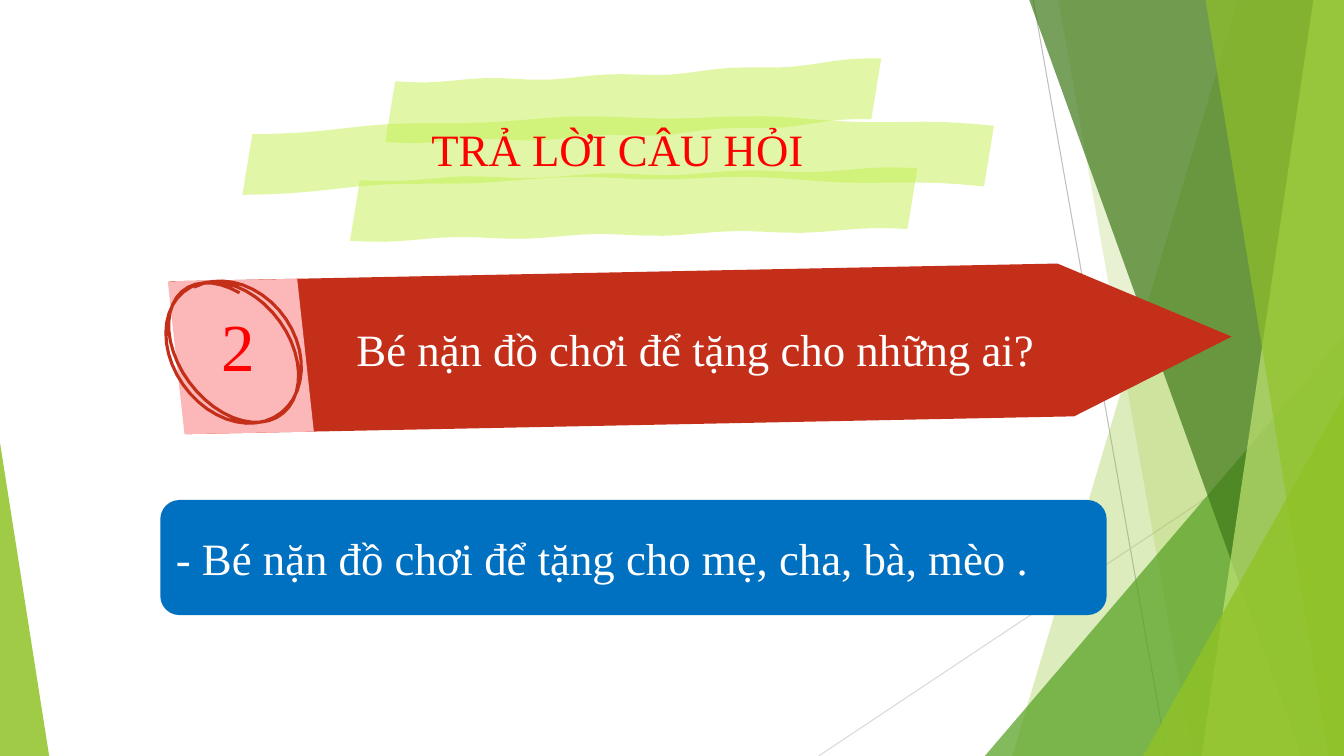
import dataclasses
import math

import pptx
import pptx.dml.color
import pptx.enum.shapes
import pptx.enum.text
import pptx.oxml.ns
import pptx.util
from lxml import etree

Cm = pptx.util.Cm
qn = pptx.oxml.ns.qn
SHAPE = pptx.enum.shapes.MSO_SHAPE
ALIGN = pptx.enum.text.PP_ALIGN
ANCHOR = pptx.enum.text.MSO_ANCHOR


@dataclasses.dataclass(frozen=True)
class Theme:
    font: str = "Times New Roman"
    body_pt: int = 32
    number_pt: int = 48
    white: str = "FFFFFF"
    red: str = "FF0000"
    brick: str = "C42F1A"
    pink: str = "FCB8B8"
    blue: str = "0070C0"
    brush: str = "C4F150"
    lime: str = "90C226"
    pale_lime: str = "C0E474"
    green: str = "54A021"
    dark_green: str = "3F7819"
    grey: str = "BFBFBF"
    light_grey: str = "D9D9D9"


THEME = Theme()


def rgb(colour):
    return pptx.dml.color.RGBColor.from_string(colour)


def mix(a, b, t):
    """Value a share t of the way from a to b."""
    return a + (b - a) * t


def paint(sp, colour, opacity=100):
    sp.shadow.inherit = False
    sp.line.fill.background()
    sp.fill.solid()
    sp.fill.fore_color.rgb = rgb(colour)
    if opacity < 100:
        clr = sp._element.spPr.find(qn("a:solidFill")).find(qn("a:srgbClr"))
        etree.SubElement(clr, qn("a:alpha"), val=str(opacity * 1000))


def add_outline(s, box, points, close=True):
    """Join points, in cm from the box's top left corner, into a freeform."""
    spots = [(Cm(box[0] + x), Cm(box[1] + y)) for x, y in points]
    builder = s.shapes.build_freeform(*spots[0])
    builder.add_line_segments(spots[1:], close=close)
    return builder.convert_to_shape()


def add_triangle(s, box, apex, colour, opacity):
    sp = s.shapes.add_shape(SHAPE.ISOSCELES_TRIANGLE, *map(Cm, box))
    sp.adjustments[0] = apex
    paint(sp, colour, opacity)


def write(sp, text, size, colour, align=ALIGN.CENTER, anchor=ANCHOR.TOP, inset=None):
    tf = sp.text_frame
    tf.word_wrap = True
    tf.vertical_anchor = anchor
    if inset is not None:
        tf.margin_left = tf.margin_top = tf.margin_right = tf.margin_bottom = Cm(inset)
    p = tf.paragraphs[0]
    p.alignment = align
    r = p.add_run()
    r.text = text
    r.font.name = THEME.font
    r.font.size = pptx.util.Pt(size)
    r.font.color.rgb = rgb(colour)


def brush_stroke(left, right, left_y, right_y, arch):
    """Slanted marker stroke: a wavy top edge, and the same edge moved down."""
    thickness, slant, wave, waves, steps = 1.53, 0.25, 0.04, 4, 32
    top_edge = []
    for i in range(steps + 1):
        t = i / steps
        y = mix(left_y, right_y, t) - arch * math.sin(math.pi * t)
        y += wave * math.sin(2 * math.pi * waves * t)
        top_edge.append((mix(left, right, t), y))
    bottom_edge = [(x - slant, y + thickness) for x, y in reversed(top_edge)]
    return top_edge + bottom_edge


def scribbled_ring():
    """Two turns of a pen around an ellipse that widens and tilts as it goes."""
    centre_x, centre_y = 1.68, 2.25
    start, end, steps = 84, 844, 90
    points = []
    for i in range(steps + 1):
        t = i / steps
        angle = mix(start, end, t)
        tilt = mix(-25, -10, t)
        points.append((
            centre_x + mix(1.6, 1.75, t) * math.cos(math.radians(angle)),
            centre_y - mix(1.75, 1.8, t) * math.sin(math.radians(angle + tilt))))
    return points


def on_banner(along, down):
    """Place a point on the tilted banner: cm along it, share of its height down."""
    height, lean, rise = 3.85, 0.42, 0.02
    return 0.08 + along + lean * down, 0.46 - rise * along + height * down


def draw_facets(s, box):
    left, top, w, h = box
    for x1, y1, x2, y2, colour in [(1.22, 0, 4.59, h, THEME.grey),
                                   (w, 10.24, -4.19, h, THEME.light_grey)]:
        line = s.shapes.add_connector(
            pptx.enum.shapes.MSO_CONNECTOR.STRAIGHT,
            Cm(left + x1), Cm(top + y1), Cm(left + x2), Cm(top + y2))
        line.line.color.rgb = rgb(colour)
        line.line.width = pptx.util.Pt(0.75)
        etree.SubElement(line._element.spPr, qn("a:effectLst"))

    def band(top_x, bottom_x, colour, opacity):
        """Fill from a slanting edge to the right side of the box."""
        points = [(top_x, 0), (w, 0), (w, h), (bottom_x, h)]
        paint(add_outline(s, box, points), colour, opacity)

    def corner(x, y, colour, opacity):
        """Fill the bottom right corner of the box with a triangle."""
        add_triangle(s, (left + x, top + y, w - x, h - y), 1, colour, opacity)

    band(6.38, 0.69, THEME.lime, 30)
    band(1.85, 5.23, THEME.lime, 20)
    corner(0, 8.46, THEME.green, 72)
    band(1.12, 7.98, THEME.dark_green, 70)
    band(8.28, 5.46, THEME.pale_lime, 70)
    band(5.56, 8.66, THEME.lime, 65)
    corner(3.99, 9.98, THEME.lime, 80)


def draw_title(s, box):
    left, top, w, h = box
    middle = brush_stroke(0.36, w - 0.08, 1.91, 1.7, arch=0.32)
    lower = brush_stroke(3.07, 17.12, 3.07, 2.77, arch=0)
    upper = brush_stroke(3.96, 16.21, 0.58, 0, arch=-0.12)
    for stroke in (middle, lower, upper):
        paint(add_outline(s, box, stroke), THEME.brush, 50)
    sp = s.shapes.add_textbox(Cm(left - 0.25), Cm(top + 0.28), Cm(w + 0.5), Cm(3))
    write(sp, "TRẢ LỜI CÂU HỎI", THEME.body_pt, THEME.red,
          anchor=ANCHOR.BOTTOM, inset=0.33)


def draw_question(s, box):
    left, top, w, h = box
    panel_end, shoulder, tip = 3.22, 22.38, 26.56
    arrow = [on_banner(0, 0), on_banner(shoulder, 0), on_banner(tip, 0.5),
             on_banner(shoulder, 1), on_banner(0, 1)]
    number_panel = [on_banner(-0.04, 0), on_banner(panel_end, 0),
                    on_banner(panel_end, 1), on_banner(-0.04, 1)]
    paint(add_outline(s, box, arrow), THEME.brick)
    paint(add_outline(s, box, number_panel), THEME.pink)

    sp = s.shapes.add_textbox(Cm(left + 3.33), Cm(top + 1.1), Cm(20.02), Cm(2.11))
    write(sp, "Bé nặn đồ chơi để tặng cho những ai?", THEME.body_pt, THEME.white,
          anchor=ANCHOR.MIDDLE, inset=0.33)

    ring = add_outline(s, box, scribbled_ring(), close=False)
    ring.shadow.inherit = False
    ring.fill.background()
    ring.line.color.rgb = rgb(THEME.brick)
    ring.line.width = pptx.util.Pt(2.25)
    sp = s.shapes.add_textbox(Cm(left + 0.84), Cm(top + 0.91), Cm(1.96), Cm(2.31))
    write(sp, "2", THEME.number_pt, THEME.red)


def draw_answer(s, box):
    sp = s.shapes.add_shape(SHAPE.ROUNDED_RECTANGLE, *map(Cm, box))
    paint(sp, THEME.blue)
    write(sp, "- Bé nặn đồ chơi để tặng cho mẹ, cha, bà, mèo .", THEME.body_pt,
          THEME.white, align=ALIGN.LEFT, anchor=ANCHOR.MIDDLE)


def main():
    prs = pptx.Presentation()
    prs.slide_width, prs.slide_height = Cm(33.87), Cm(19.05)
    s = prs.slides.add_slide(prs.slide_layouts[6])
    draw_facets(s, (24.82, 0, 9.05, 19.05))
    add_triangle(s, (0, 11.15, 1.24, 7.9), 0, THEME.lime, 85)
    draw_title(s, (6, 1.47, 19.13, 4.62))
    draw_question(s, (4.19, 6.63, 26.85, 4.34))
    draw_answer(s, (4.04, 12.6, 23.85, 2.9))
    prs.save("out.pptx")


if __name__ == "__main__":
    main()
